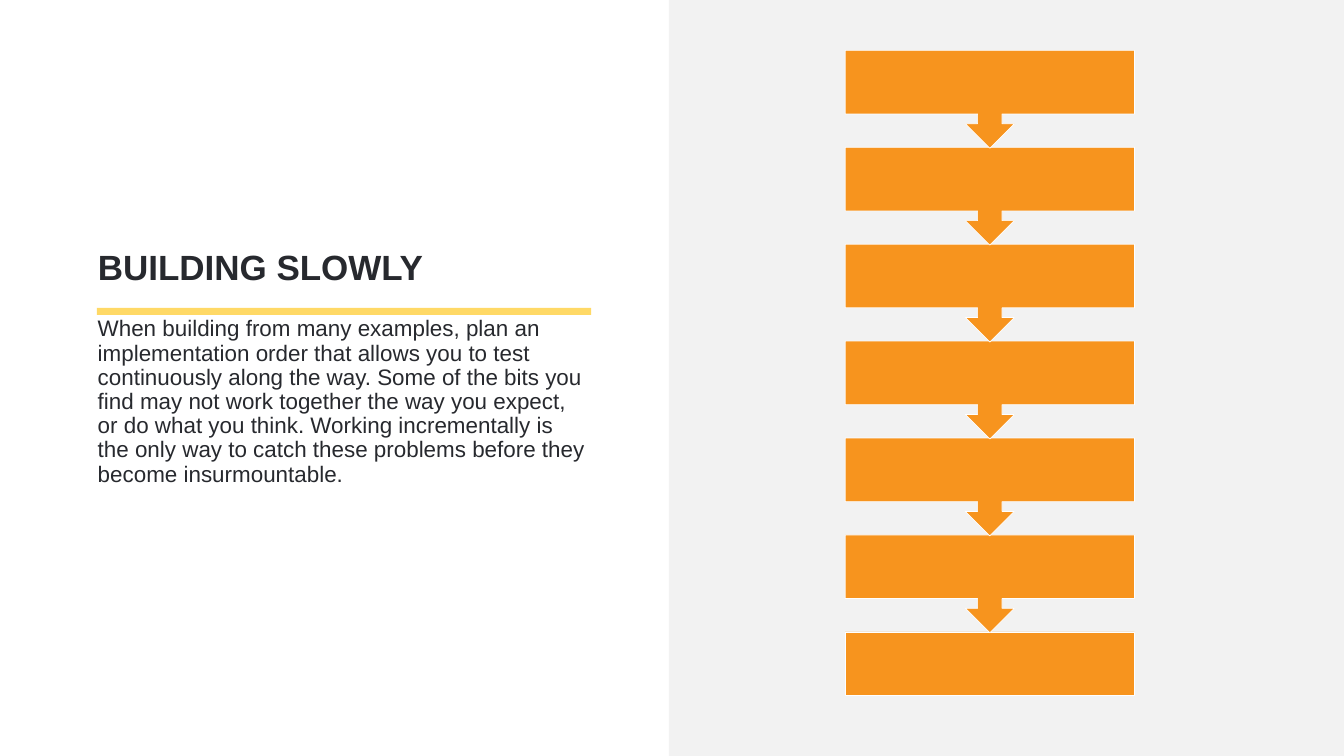
from pptx import Presentation
from pptx.dml.color import RGBColor
from pptx.enum import shapes, text
from pptx.util import Pt

WHITE = RGBColor(0xFF, 0xFF, 0xFF)
PANEL_GREY = RGBColor(0xF2, 0xF2, 0xF2)
RULE_YELLOW = RGBColor(0xFF, 0xD9, 0x66)
STEP_ORANGE = RGBColor(0xF7, 0x94, 0x1E)
INK = RGBColor(0x27, 0x29, 0x2E)

STEPS = 7
STEP_LEFT, STEP_TOP, STEP_WIDTH = 1207.44, 72, 413.28
STEP_PITCH, CALLOUT_HEIGHT, LAST_HEIGHT = 138.46, 139.68, 90.72
TEXT_LEFT, TEXT_WIDTH = 132.48, 712.08
ADVICE = (
    "When building from many examples, plan an implementation order that "
    "allows you to test continuously along the way. Some of the bits you find "
    "may not work together the way you expect, or do what you think. Working "
    "incrementally is the only way to catch these problems before they become "
    "insurmountable."
)


class SlideBuilder:
    """Draws styled elements on one slide, with all lengths in points."""

    font = "Arial"

    def __init__(self, slide):
        self.slide = slide

    def block(self, kind, left, top, width, height, fill, outline=None, parent=None):
        owner = parent or self.slide
        block = owner.shapes.add_shape(kind, Pt(left), Pt(top), Pt(width), Pt(height))
        block.shadow.inherit = False
        block.fill.solid()
        block.fill.fore_color.rgb = fill
        if outline is None:
            block.line.fill.background()
        else:
            block.line.color.rgb = outline
            block.line.width = Pt(1)
        return block

    def set_words(self, holder, words, size, anchor, bold=False, before=0):
        frame = holder.text_frame
        frame.text = words
        frame.word_wrap = True
        frame.auto_size = text.MSO_AUTO_SIZE.NONE
        frame.vertical_anchor = anchor
        paragraph = frame.paragraphs[0]
        paragraph.alignment = text.PP_ALIGN.LEFT
        paragraph.line_spacing = 0.9
        paragraph.space_before = Pt(before)
        paragraph.font.name = self.font
        paragraph.font.size = Pt(size)
        paragraph.font.bold = bold
        paragraph.font.color.rgb = INK

    def title(self, words, left, top, width, height):
        title = self.slide.shapes.title
        title.left, title.top = Pt(left), Pt(top)
        title.width, title.height = Pt(width), Pt(height)
        self.set_words(title, words, 50, text.MSO_ANCHOR.BOTTOM, bold=True)

    def body(self, words, left, top, width, height):
        body = self.slide.shapes.add_textbox(Pt(left), Pt(top), Pt(width), Pt(height))
        self.set_words(body, words, 32, text.MSO_ANCHOR.TOP, before=20)

    def step_chain(self):
        chain = self.slide.shapes.add_group_shape()
        for step in reversed(range(STEPS)):
            last = step == STEPS - 1
            kind = (shapes.MSO_SHAPE.RECTANGLE if last
                    else shapes.MSO_SHAPE.UP_ARROW_CALLOUT)
            height = LAST_HEIGHT if last else CALLOUT_HEIGHT
            box = self.block(kind, STEP_LEFT, STEP_TOP + step * STEP_PITCH,
                             STEP_WIDTH, height, STEP_ORANGE, WHITE, chain)
            box.rotation = 0 if last else 180


def main():
    deck = Presentation()
    deck.slide_width, deck.slide_height = Pt(1920), Pt(1080)
    builder = SlideBuilder(deck.slides.add_slide(deck.slide_layouts[5]))
    rectangle = shapes.MSO_SHAPE.RECTANGLE
    builder.block(rectangle, 955.44, 0, 964.56, 1080, PANEL_GREY)
    builder.block(rectangle, 138.24, 439.92, 706.32, 10.08, RULE_YELLOW)
    builder.title("BUILDING SLOWLY", TEXT_LEFT, 72, TEXT_WIDTH, 343.44)
    builder.step_chain()
    builder.body(ADVICE, TEXT_LEFT, 450, TEXT_WIDTH, 630)
    deck.save("out.pptx")


if __name__ == "__main__":
    main()
